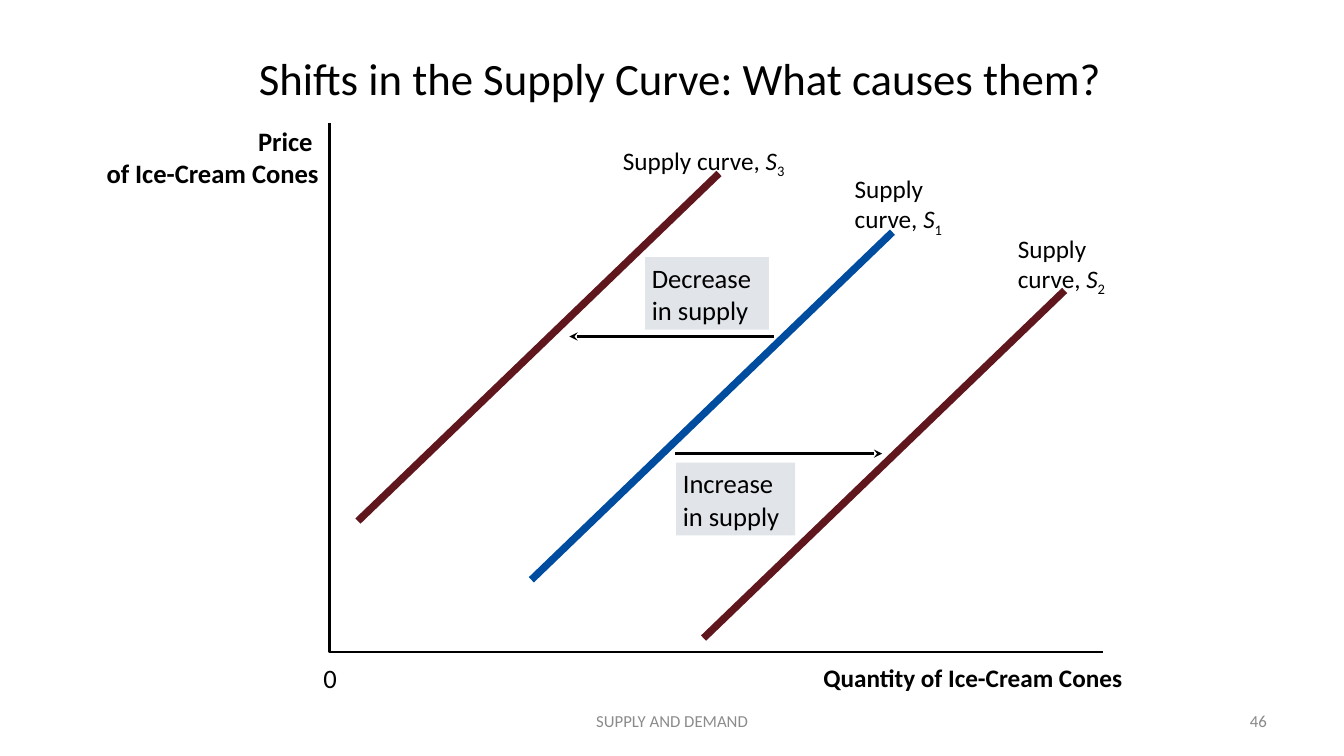
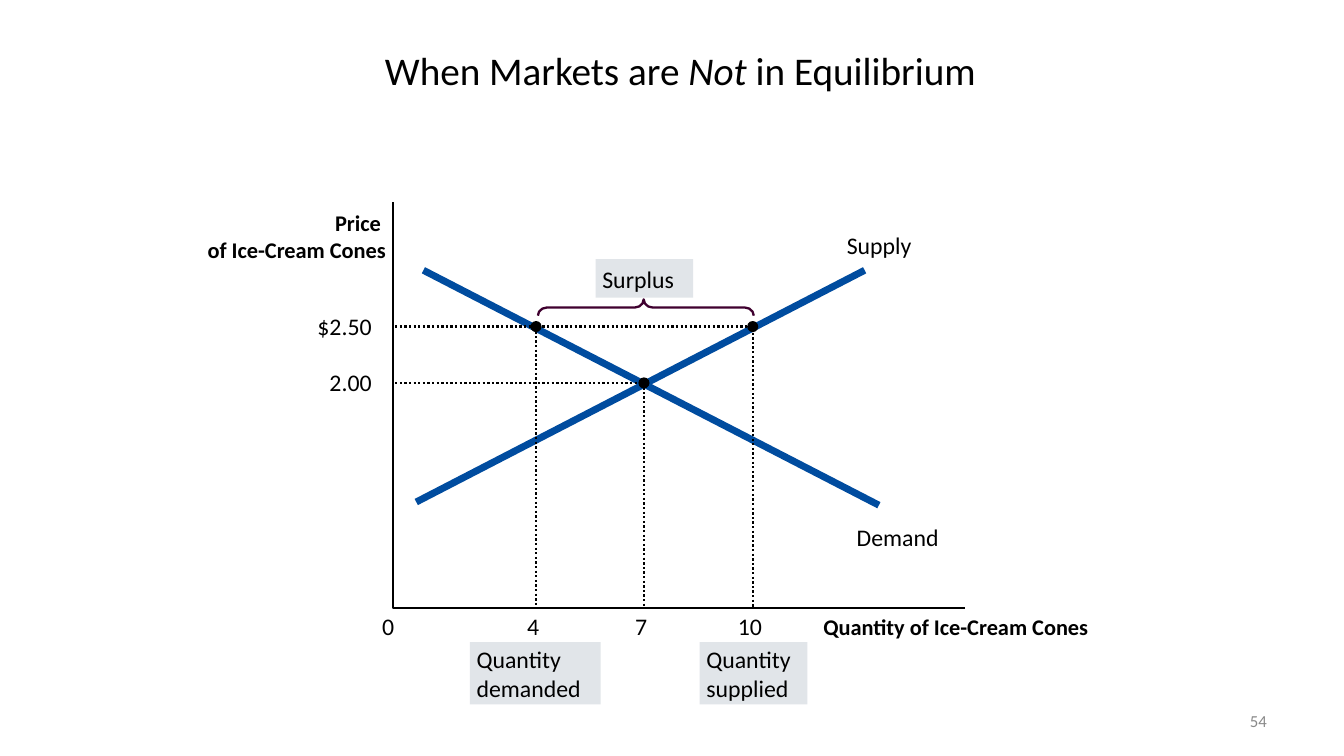
from lxml import etree
from pptx import Presentation
from pptx.dml.color import RGBColor
from pptx.enum.dml import MSO_LINE
from pptx.enum.shapes import MSO_CONNECTOR, MSO_SHAPE
from pptx.enum.text import MSO_ANCHOR, MSO_AUTO_SIZE, PP_ALIGN
from pptx.oxml.ns import qn
from pptx.util import Cm, Pt

LEFT, MID, RIGHT = PP_ALIGN.LEFT, PP_ALIGN.CENTER, PP_ALIGN.RIGHT
TOP, CENTER = MSO_ANCHOR.TOP, MSO_ANCHOR.MIDDLE
DOTS = MSO_LINE.ROUND_DOT
RECT, OVAL, BRACE = MSO_SHAPE.RECTANGLE, MSO_SHAPE.OVAL, MSO_SHAPE.LEFT_BRACE
STRAIGHT = MSO_CONNECTOR.STRAIGHT
FONT = "Calibri"
HUES = {"ink": "000000", "blue": "004C9F", "red": "5F161D", "plum": "3F002F",
        "pale": "E1E5E9", "gray": "8C8C8C", "page": "898989"}
HUES = {name: RGBColor.from_string(code) for name, code in HUES.items()}


def write(shape, text, size, align=LEFT, anchor=TOP, hue="ink", bold=False,
          space=1.0, inset=0):
    """Fill a shape with text: a string, or a list of (words, style) runs."""
    frame = shape.text_frame
    look = {"word_wrap": True, "auto_size": MSO_AUTO_SIZE.NONE,
            "vertical_anchor": anchor, "margin_left": Cm(inset),
            "margin_right": 0, "margin_top": 0, "margin_bottom": 0}
    for key, value in look.items():
        setattr(frame, key, value)
    para = frame.paragraphs[0]
    runs = [(text, "")] if isinstance(text, str) else text
    for words, style in runs:
        for row, line in enumerate(words.split("\n")):
            if row:
                para = frame.add_paragraph()
            para.alignment, para.line_spacing = align, space
            run = para.add_run()
            run.text = line
            face = {"name": FONT, "size": Pt(size), "bold": bold,
                    "italic": style == "italic"}
            for key, value in face.items():
                setattr(run.font, key, value)
            run.font.color.rgb = HUES[hue]
            if style == "sub":
                run._r.get_or_add_rPr().set("baseline", "-25000")


def draw(slide, points, hue, width, dash=None, arrow=False):
    """Join points with a connector, or with an open outline if over two."""
    points = [(Cm(x), Cm(y)) for x, y in points]
    if len(points) == 2:
        line = slide.shapes.add_connector(STRAIGHT, *points[0], *points[1])
    else:
        path = slide.shapes.build_freeform(*points[0], scale=1.0)
        path.add_line_segments(points[1:], close=False)
        line = path.convert_to_shape()
        line.fill.background()
    line.line.color.rgb = HUES[hue]
    line.line.width = Pt(width)
    if dash:
        line.line.dash_style = dash
    if arrow:
        tip = etree.SubElement(line.line._get_or_add_ln(), qn("a:tailEnd"))
        tip.set("type", "stealth")
    etree.SubElement(line._element.spPr, qn("a:effectLst"))


deck = Presentation()
deck.slide_width, deck.slide_height = Cm(33.87), Cm(19.05)

# Each label: text, left, top. Each tag: text, left, top, width, height.
PAGES = [
    {"title": "Shifts in the Supply Curve: What causes them?",
     "head": (32, 2.21), "page": "46", "foot": "SUPPLY AND DEMAND",
     "axes": [(8.3, 3.1), (8.3, 16.43), (27.81, 16.43)], "thin": 1.75,
     "price": (8.03, 3.15, 19), "amount": (16.69, 18), "size": 19,
     "labels": [("0", 8.15, 16.69)],
     "tags": [("Increase\nin supply", 17.04, 11.66, 3, 1.83),
              ("Decrease\nin supply", 16.26, 6.48, 3.12, 1.83)]},
    {"title": [("When Markets are ", ""), ("Not", "italic"),
               (" in Equilibrium", "")],
     "head": (28, 1.78), "page": "54", "foot": None,
     "axes": [(9.9, 5.1), (9.9, 15.32), (24.33, 15.32)], "thin": 1.63,
     "price": (9.73, 5.28, 16), "amount": (15.44, 16), "size": 17,
     "labels": [("0", 9.63, 15.42), ("Supply", 21.34, 5.82),
                ("Demand", 21.59, 13.16)],
     "tags": [("Quantity\ndemanded", 11.84, 16.18, 3.3, 1.57),
              ("Quantity\nsupplied", 17.63, 16.18, 2.72, 1.57),
              ("Surplus", 15.01, 6.53, 2.46, 0.97)]},
]

slides = []
for page in PAGES:
    slide = deck.slides.add_slide(deck.slide_layouts[5])
    slides.append(slide)
    box = slide.shapes.add_textbox
    size, height = page["head"]
    title = slide.shapes.title
    place = {"left": 5.92, "top": 0.97, "width": 22.45, "height": height}
    for key, value in place.items():
        setattr(title, key, Cm(value))
    write(title, page["title"], size, MID, CENTER, space=0.8)

    draw(slide, page["axes"], "ink", page["thin"])
    right, top, size = page["price"]
    write(box(Cm(right - 7), Cm(top), Cm(7), Cm(1.63)),
          "Price \nof Ice-Cream Cones", size, RIGHT, bold=True)
    top, size = page["amount"]
    write(box(Cm(20.75), Cm(top), Cm(9), Cm(0.76)),
          "Quantity of Ice-Cream Cones", size, bold=True)
    for text, left, top in page["labels"]:
        write(box(Cm(left), Cm(top), Cm(3), Cm(0.8)), text, page["size"])
    for text, *area in page["tags"]:
        tag = slide.shapes.add_shape(RECT, *map(Cm, area))
        tag.shadow.inherit = False
        tag.fill.solid()
        tag.fill.fore_color.rgb = HUES["pale"]
        tag.line.fill.background()
        write(tag, text, page["size"], anchor=CENTER, space=1.03, inset=0.17)

    write(box(Cm(24.28), Cm(17.65), Cm(7.65), Cm(1.02)),
          page["page"], 12, RIGHT, CENTER, "page")
    if page["foot"]:
        write(box(Cm(11.58), Cm(17.65), Cm(10.72), Cm(1.02)),
              page["foot"], 12, MID, CENTER, "gray")

# Parallel supply curves and the shifts between them
shift, surplus = slides
CURVES = [("3", "red", 9.02, 13.13, "Supply curve, ", 15.7, 3.66),
          ("1", "blue", 13.39, 14.61, "Supply\ncurve, ", 21.54, 4.37),
          ("2", "red", 17.73, 16.08, "Supply\ncurve, ", 25.65, 5.87)]
for digit, hue, x, y, name, left, top in CURVES:
    draw(shift, [(x, y), (x + 9.1, y - 8.76)], hue, 5.25)
    write(shift.shapes.add_textbox(Cm(left), Cm(top), Cm(5), Cm(1.55)),
          [(name, ""), ("S", "italic"), (digit, "sub")], 18)
for start, end, y in [(19.51, 14.35, 8.48), (17.02, 22.23, 11.43)]:
    draw(shift, [(start, y), (end, y)], "ink", 1.75, arrow=True)

# Crossing curves, with dotted guides to both axes
draw(surplus, [(21.79, 6.81), (10.49, 12.65)], "blue", 5)
draw(surplus, [(10.67, 6.81), (22.15, 12.73)], "blue", 5)
floor = 15.32
for amount, price, x, y in [("4", None, 13.51, 8.23),
                            ("10", "$2.50", 18.97, 8.23),
                            ("7", "2.00", 16.23, 9.65)]:
    guide = [(x, y), (x, floor)]
    box = surplus.shapes.add_textbox
    write(box(Cm(x - 0.57), Cm(15.42), Cm(1), Cm(0.74)), amount, 17, MID)
    if price:
        guide.insert(0, (9.96, y))
        write(box(Cm(6.37), Cm(y - 0.38), Cm(3), Cm(0.74)), price, 17, RIGHT)
    draw(surplus, guide, "ink", 1.63, DOTS)
    dot = surplus.shapes.add_shape(OVAL, Cm(x - 0.14), Cm(y - 0.14),
                                   Cm(0.28), Cm(0.28))
    dot.shadow.inherit = False
    dot.fill.solid()
    dot.fill.fore_color.rgb = HUES["ink"]
    dot.line.fill.background()

# The brace stands upright, then turns to point at its tag
brace = surplus.shapes.add_shape(BRACE, Cm(16.07), Cm(5.03), Cm(0.41), Cm(5.44))
brace.rotation = 90
brace.adjustments[0], brace.adjustments[1] = 0.55, 0.51
brace.shadow.inherit = False
brace.fill.background()
brace.line.color.rgb = HUES["plum"]
brace.line.width = Pt(1.63)

deck.save("out.pptx")
